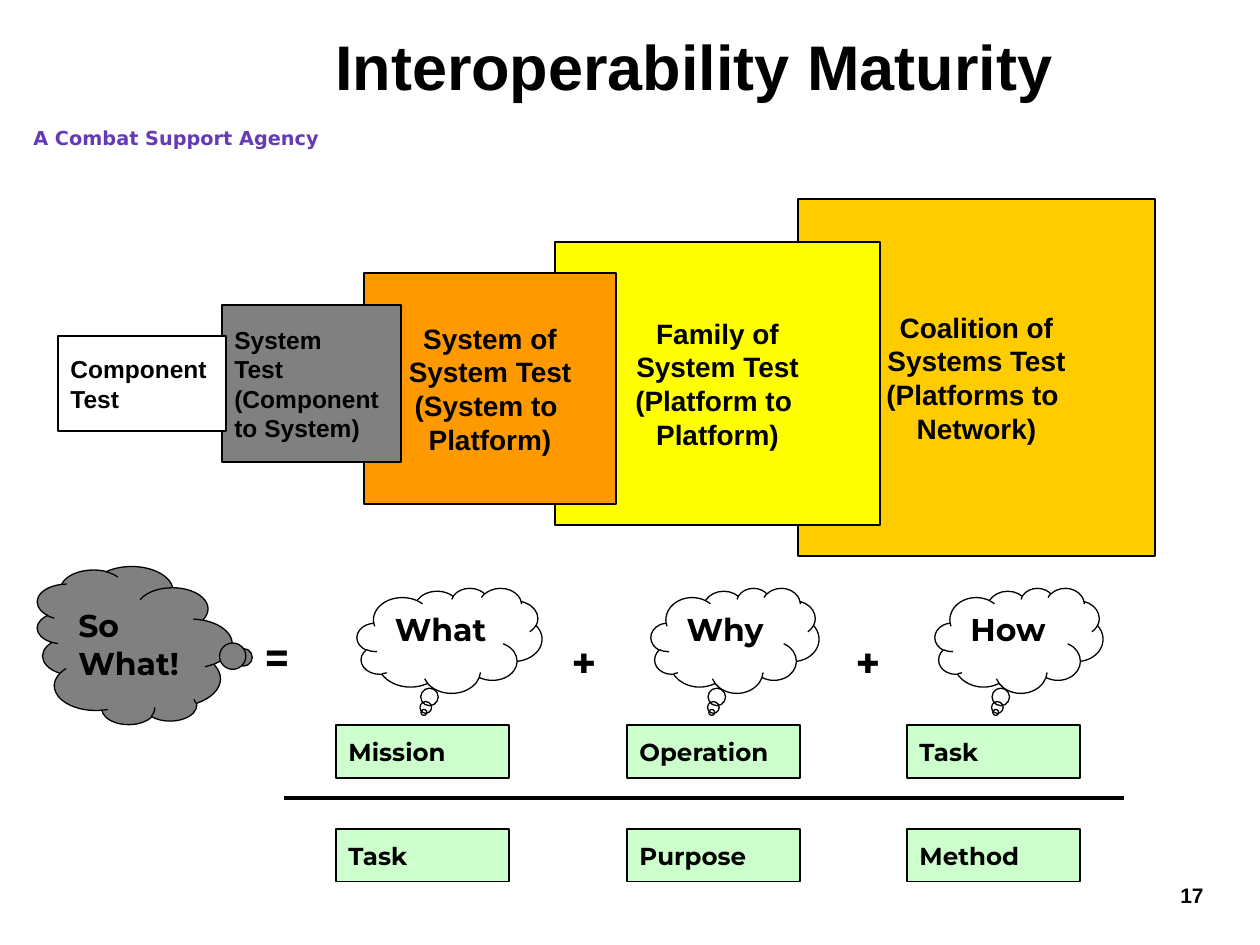
from lxml.etree import SubElement
from pptx import Presentation
from pptx.dml.color import RGBColor
from pptx.enum.shapes import MSO_CONNECTOR, MSO_SHAPE
from pptx.enum.text import MSO_ANCHOR, PP_ALIGN
from pptx.oxml.ns import qn
from pptx.util import Pt

PX = 914400 // 126
BLACK = "000000"
LEFT, CENTER = PP_ALIGN.LEFT, PP_ALIGN.CENTER
TOP, MIDDLE = MSO_ANCHOR.TOP, MSO_ANCHOR.MIDDLE


def px(*lengths):
    return [round(length * PX) for length in lengths]


def rgb(hex_color):
    return RGBColor.from_string(hex_color)


def write(shape, lines, size, font, color=BLACK, align=LEFT, anchor=MIDDLE, wrap=True):
    frame = shape.text_frame
    frame.word_wrap = wrap
    frame.vertical_anchor = anchor
    for index, line in enumerate(lines):
        paragraph = frame.add_paragraph() if index else frame.paragraphs[0]
        paragraph.alignment = align
        run = paragraph.add_run()
        run.text = line
        run.font.name = font
        run.font.size = Pt(size)
        run.font.bold = True
        run.font.color.rgb = rgb(color)


def label(shapes, box, text, size, font, **style):
    write(shapes.add_textbox(*px(*box)), [text], size, font, **style)


def outlined(shapes, preset, box, fill=None):
    shape = shapes.add_shape(preset, *px(*box))
    shape.shadow.inherit = False
    if fill:
        shape.fill.solid()
        shape.fill.fore_color.rgb = rgb(fill)
    else:
        shape.fill.background()
    shape.line.color.rgb = rgb(BLACK)
    shape.line.width = Pt(0.75)
    return shape


def cloud(shapes, box, lines, tail, fill=None):
    shape = outlined(shapes, MSO_SHAPE.CLOUD_CALLOUT, box, fill)
    shape.adjustments[0], shape.adjustments[1] = tail
    write(shape, lines, 18, "Montserrat", anchor=TOP)
    return shape


def test_stages(slide, left, top):
    """Overlapping test boxes, from the widest scope at the back to the narrowest."""
    shapes = slide.shapes.add_group_shape().shapes
    stages = [
        (740, 0, 357, 357, "FFCC00", 16, CENTER,
         ["Coalition of", "Systems Test", "(Platforms to ", "Network)"]),
        (497, 43, 325, 283, "FFFF00", 16, CENTER,
         ["Family of", "System Test", "(Platform to ", "Platform)"]),
        (306, 74, 252, 231, "FF9900", 16, CENTER,
         ["System of", "System Test", "(System to ", "Platform)"]),
        (164, 106, 179, 157, "808080", 14, LEFT,
         ["System", "Test", "(Component", "to System)"]),
        (0, 137, 168, 95, "FFFFFF", 14, LEFT, ["Component", "Test"]),
    ]
    for x, y, width, height, fill, size, align, lines in stages:
        box = (left + x, top + y, width, height)
        stage = outlined(shapes, MSO_SHAPE.RECTANGLE, box, fill)
        write(stage, lines, size, "Arial", align=align)


def question_equation(slide, left, top):
    """So What! = What + Why + How, each question over its pair of terms."""
    shapes = slide.shapes.add_group_shape().shapes

    rule_y = top + 250
    rule = shapes.add_connector(
        MSO_CONNECTOR.STRAIGHT, *px(left + 229, rule_y, left + 1069, rule_y))
    rule.line.color.rgb = rgb(BLACK)
    rule.line.width = Pt(2.25)
    SubElement(rule._element.spPr, qn("a:effectLst"))

    questions = [
        ("What", 302, 185, 281, ("Mission", "Task")),
        ("Why", 596, 168, 572, ("Operation", "Purpose")),
        ("How", 880, 168, 852, ("Task", "Method")),
    ]
    for question, cloud_x, cloud_width, term_x, terms in questions:
        for row, term in enumerate(terms):
            box = (left + term_x, top + 177 + row * 104, 173, 53)
            write(outlined(shapes, MSO_SHAPE.RECTANGLE, box, "CCFFCC"),
                  [term], 14, "Montserrat")
        cloud(shapes, (left + cloud_x, top + 40, cloud_width, 105),
              [question], (-0.138, 0.685))

    so_what = cloud(shapes, (left, top, 158, 195), ["So", "What!"],
                    (-0.076, 0.572), "808080")
    so_what.rotation = 270
    so_what.text_frame._txBody.bodyPr.set("vert", "eaVert")

    for sign, x, height in (("+", 504, 63), ("+", 788, 63), ("=", 197, 53)):
        label(shapes, (left + x, top + 82, 63, height), sign, 24, "Montserrat")


def main():
    deck = Presentation()
    deck.slide_width, deck.slide_height = px(1260, 945)
    slide = deck.slides.add_slide(deck.slide_layouts[6])
    label(slide.shapes, (21, 120, 343, 35), "A Combat Support Agency", 11,
          "DejaVu Sans", color="6639B7", anchor=TOP)
    label(slide.shapes, (228, 0, 932, 131), "Interoperability Maturity", 36,
          "Arial", align=CENTER)
    test_stages(slide, 58, 199)
    question_equation(slide, 55, 548)
    label(slide.shapes, (1168, 876, 49, 38), "17", 12, "Arial",
          anchor=TOP, wrap=False)
    deck.save("out.pptx")


if __name__ == "__main__":
    main()
